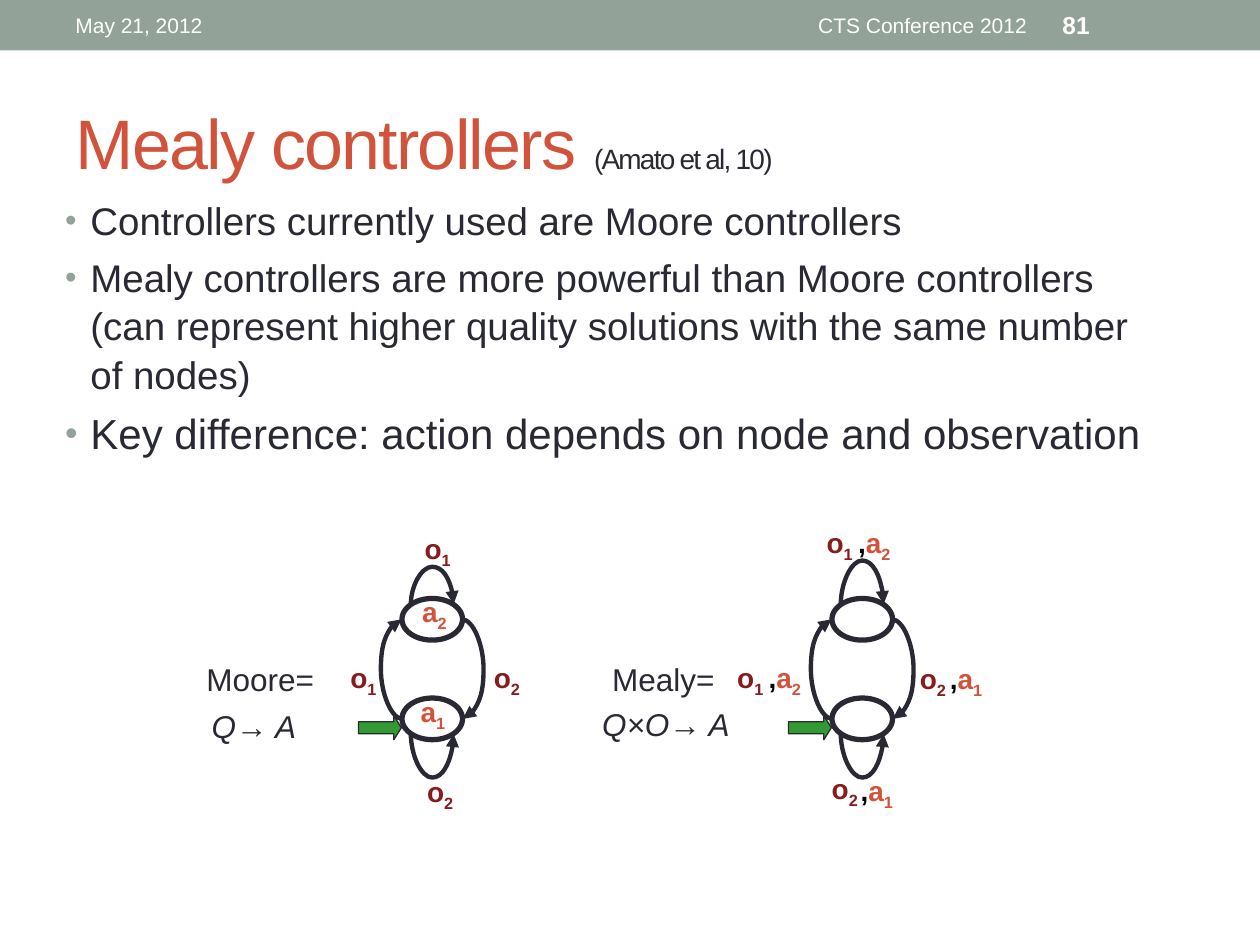
from lxml.etree import SubElement
from pptx import Presentation
from pptx.dml.color import RGBColor
from pptx.enum.shapes import MSO_CONNECTOR as Link, MSO_SHAPE as Shape
from pptx.enum.text import MSO_ANCHOR as Anchor, PP_ALIGN as Align
from pptx.oxml.ns import qn
from pptx.util import Pt

COLORS = {"band": "93A299", "title": "D2533C", "text": "292934", "white": "FFFFFF",
          "arrow": "339933", "o": "881C1C", "a": "D2533C", ",": "000000"}
FONT = "Arial"

TITLE = [("Mealy controllers ", 40, "title"), ("(Amato et al, 10)", 16, "text")]
BULLETS = [
    ("Controllers currently used are Moore controllers", 22),
    ("Mealy controllers are more powerful than Moore controllers (can represent "
     "higher quality solutions with the same number of nodes)", 22),
    ("Key difference: action depends on node and observation", 24),
]
# text, left, width, size, bold, alignment
HEADER = [
    ("May 21, 2012", 36, 228, 12, False, Align.LEFT),
    ("CTS Conference 2012", 270, 324, 12, False, Align.RIGHT),
    ("81", 600, 84, 14, True, Align.LEFT),
]
# text, left, top, width, italic
CAPTIONS = [
    ("Moore=", 110.9, 373.7, 85.7, False),
    ("Mealy=", 342.7, 373.7, 82.1, False),
    ("Q→ A", 113.8, 400.3, 64.1, True),
    ("Q×O→ A", 337, 399.6, 92.9, True),
]
# Digits become subscripts; text, left, top, width, height
LABELS = [
    ("a1", 231.8, 392.4, 40.3, 47.5), ("a2", 232.6, 335.5, 42.5, 28.1),
    ("o2", 235.4, 438.5, 39.6, 28.1), ("o1", 234, 299.5, 39.6, 28.1),
    ("o2", 273.6, 373, 39.6, 28.1), ("o1", 191.5, 373, 39.6, 28.1),
    ("o2", 466.6, 436.3, 39.6, 28.1), (",a1", 483.1, 437.8, 52.6, 58.3),
    ("o1", 412.6, 373, 39.6, 28.1), (",a2", 430.6, 373, 51.1, 28.1),
    ("o1", 463.7, 295.9, 39.6, 28.1), (",a2", 481.7, 295.9, 54.7, 28.1),
    ("o2", 517, 373.7, 39.6, 28.1), (",a1", 534.2, 373.7, 50.4, 47.5),
]
# left edge of the nodes, height of the top loop
MACHINES = [(229.7, 21.6), (475.4, 25.2)]
NODE_W, NODE_H, TOP_Y, BOTTOM_Y = 34.6, 23.8, 342, 398.9
SIDE_DEPTH, LOOP_DEPTH = 12.2, 25.2
THIN = 0.45  # unrotated width of a U-shaped connector
DIAGONAL = 0.146  # inset of an ellipse's diagonal sites, as a share of its size


def color(name):
    return RGBColor.from_string(COLORS[name])


def add_run(para, text, size, tint, bold=False, italic=False):
    run = para.add_run()
    run.text = text
    font = run.font
    font.name, font.size, font.bold, font.italic = FONT, Pt(size), bold, italic
    font.color.rgb = color(tint)
    return run


def add_box(left, top, width, height, inset=(7.2, 3.6)):
    box = slide.shapes.add_textbox(Pt(left), Pt(top), Pt(width), Pt(height))
    frame = box.text_frame
    frame.word_wrap = True
    frame.margin_left = frame.margin_right = Pt(inset[0])
    frame.margin_top = frame.margin_bottom = Pt(inset[1])
    return frame


def add_shape(kind, left, top, width, height, fill=None, line=None):
    shape = slide.shapes.add_shape(kind, Pt(left), Pt(top), Pt(width), Pt(height))
    shape.shadow.inherit = False
    if fill:
        shape.fill.solid()
        shape.fill.fore_color.rgb = color(fill)
    else:
        shape.fill.background()
    if line:
        shape.line.color.rgb = color("text")
        shape.line.width = Pt(line)
    else:
        shape.line.fill.background()
    return shape


def add_arc(start, end, center, span, depth, rotation, flips=()):
    """U-shaped arrow; start and end are (node, connection site)."""
    x, y = center
    arc = slide.shapes.add_connector(Link.CURVE, Pt(x - THIN / 2), Pt(y - span / 2),
                                     Pt(x + THIN / 2), Pt(y + span / 2))
    arc.line.color.rgb = color("text")
    arc.line.width = Pt(2.5)
    SubElement(arc.line._get_or_add_ln(), qn("a:tailEnd"), type="triangle")
    properties = arc._element.spPr
    SubElement(properties, qn("a:effectLst"))
    frame = properties.find(qn("a:xfrm"))
    frame.set("rot", str(rotation * 60000))
    for flip in flips:
        frame.set(flip, "1")
    guides = properties.find(qn("a:prstGeom")).find(qn("a:avLst"))
    SubElement(guides, qn("a:gd"), name="adj1", fmla=f"val {round(depth / THIN * 100000)}")
    joints = arc._element.nvCxnSpPr.cNvCxnSpPr
    for tag, (node, site) in (("a:stCxn", start), ("a:endCxn", end)):
        SubElement(joints, qn(tag), id=str(node.shape_id), idx=str(site))


def add_machine(left, top_depth):
    upper, lower = [add_shape(Shape.OVAL, left, y, NODE_W, NODE_H, line=3)
                    for y in (TOP_Y, BOTTOM_Y)]
    arrow = add_shape(Shape.RIGHT_ARROW, left - 24.8, 409, 24.5, 13.7, "arrow", 0.75)
    arrow.adjustments[0], arrow.adjustments[1] = 0.5, 0.313
    middle, right = left + NODE_W / 2, left + NODE_W
    side_y, side_span = (TOP_Y + BOTTOM_Y + NODE_H) / 2, BOTTOM_Y - TOP_Y
    loop_span, drop = NODE_W * (1 - 2 * DIAGONAL), NODE_H * DIAGONAL
    add_arc((lower, 2), (upper, 2), (left, side_y), side_span, SIDE_DEPTH, 180)
    add_arc((upper, 6), (lower, 6), (right, side_y), side_span, SIDE_DEPTH, 0)
    add_arc((lower, 3), (lower, 5), (middle, BOTTOM_Y + NODE_H - drop),
            loop_span, LOOP_DEPTH, 270, ["flipH"])
    add_arc((upper, 1), (upper, 7), (middle, TOP_Y + drop),
            loop_span, top_depth, 90, ["flipH", "flipV"])


deck = Presentation()
deck.slide_width, deck.slide_height = Pt(720), Pt(540)
slide = deck.slides.add_slide(deck.slide_layouts[5])

# Header band
add_shape(Shape.RECTANGLE, 0, 0, 720, 28.8, "band")
for text, left, width, size, bold, align in HEADER:
    frame = add_box(left, 1.4, width, 25.9)
    frame.vertical_anchor = Anchor.MIDDLE
    frame.paragraphs[0].alignment = align
    add_run(frame.paragraphs[0], text, size, "white", bold)

# Title
title = slide.shapes.title
title.left, title.top, title.width, title.height = Pt(36), Pt(41.8), Pt(648), Pt(77.8)
title.text_frame.vertical_anchor = Anchor.MIDDLE
para = title.text_frame.paragraphs[0]
para.alignment = Align.LEFT
for text, size, tint in TITLE:
    add_run(para, text, size, tint).font._element.set("spc", "-100")

# Bullets
frame = add_box(30.2, 108, 642.2, 354.2)
for index, (text, size) in enumerate(BULLETS):
    para = frame.add_paragraph() if index else frame.paragraphs[0]
    marks = para._p.get_or_add_pPr()
    marks.set("marL", str(Pt(14.4)))
    marks.set("indent", str(-Pt(14.4)))
    para.line_spacing = 1.05
    if index:
        para.space_before = Pt(size * 0.2)
    SubElement(SubElement(marks, qn("a:buClr")), qn("a:srgbClr"), val=COLORS["band"])
    SubElement(marks, qn("a:buSzPct"), val="85000")
    SubElement(marks, qn("a:buFont"), typeface=FONT)
    SubElement(marks, qn("a:buChar"), char="•")
    add_run(para, text, size, "text")

# Moore and Mealy machines
for left, top_depth in MACHINES:
    add_machine(left, top_depth)

# Actions and observations
for text, left, top, width, height in LABELS:
    para = add_box(left, top, width, height, (8.64, 4.32)).paragraphs[0]
    tint = None
    for letter in text:
        tint = COLORS.get(letter) and letter or tint
        run = add_run(para, letter, 16, tint, bold=True)
        if letter.isdigit():
            run.font._element.set("baseline", "-25000")

# Captions
for text, left, top, width, italic in CAPTIONS:
    para = add_box(left, top, width, 28.8).paragraphs[0]
    add_run(para, text, 18, "text", italic=italic)

deck.save("out.pptx")
